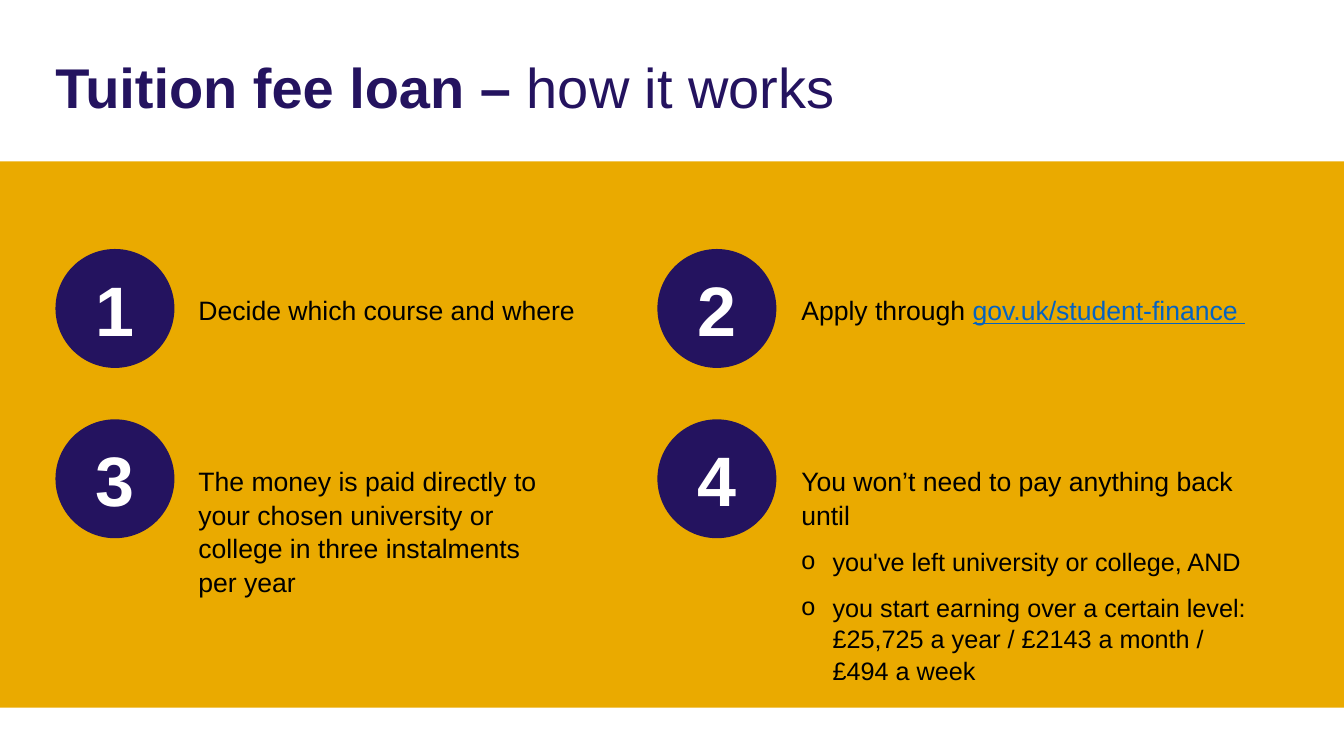
import pptx
import pptx.util
import pptx.dml.color
import pptx.enum.shapes
import pptx.enum.text
import lxml.etree

Inches = pptx.util.Inches
Pt = pptx.util.Pt
NAVY, GOLD, BLACK, WHITE, BLUE = "24135F", "EAAA00", "000000", "FFFFFF", "0563C1"


def color(text):
    return pptx.dml.color.RGBColor.from_string(text)


class Deck:
    face = "Arial"

    def __init__(self, slide):
        self.slide = slide

    def font(self, para, size, tint, bold=None):
        para.font.name = self.face
        para.font.size = Pt(size)
        para.font.color.rgb = color(tint)
        para.font.bold = bold

    def shape(self, kind, left, top, width, height, fill):
        shape = self.slide.shapes.add_shape(
            kind, Inches(left), Inches(top), Inches(width), Inches(height))
        shape.shadow.inherit = False
        shape.fill.solid()
        shape.fill.fore_color.rgb = color(fill)
        shape.line.fill.background()
        return shape

    def band(self, top, height):
        kind = pptx.enum.shapes.MSO_SHAPE.RECTANGLE
        self.shape(kind, 0, top, 13.33, height, GOLD)

    def badge(self, left, top, label):
        kind = pptx.enum.shapes.MSO_SHAPE.OVAL
        frame = self.shape(kind, left, top, 1.18, 1.18, NAVY).text_frame
        frame.vertical_anchor = pptx.enum.text.MSO_ANCHOR.MIDDLE
        para = frame.paragraphs[0]
        para.text = label
        para.alignment = pptx.enum.text.PP_ALIGN.CENTER
        self.font(para, 50, WHITE, True)

    def box(self, left, top, width, height):
        box = self.slide.shapes.add_textbox(
            Inches(left), Inches(top), Inches(width), Inches(height))
        box.text_frame.word_wrap = True
        return box.text_frame

    def title(self, strong, light):
        para = self.box(0.45, 0.47, 11.5, 0.63).paragraphs[0]
        self.font(para, 40, NAVY)
        for text, bold in ((strong, True), (light, False)):
            run = para.add_run()
            run.text = text
            run.font.bold = bold

    def body(self, left, top, width, height, text):
        frame = self.box(left, top, width, height)
        para = frame.paragraphs[0]
        para.text = text
        para.line_spacing = 1.05
        self.font(para, 19, BLACK)
        return frame

    def link(self, para, text):
        run = para.add_run()
        run.text = text
        run.font.underline = True
        run.font.color.rgb = color(BLUE)

    def bullet(self, frame, text):
        para = frame.add_paragraph()
        para.text = text
        para.level = 1
        para.space_before = Pt(10)
        para.line_spacing = 1.05
        self.font(para, 18, BLACK)
        props = para._p.get_or_add_pPr()
        props.set("marL", str(Inches(0.31)))
        props.set("indent", str(-Inches(0.31)))
        mark = lxml.etree.Element(pptx.oxml.ns.qn("a:buFont"), typeface=self.face)
        sign = lxml.etree.Element(pptx.oxml.ns.qn("a:buChar"), char="o")
        rest = props.find(pptx.oxml.ns.qn("a:defRPr"))
        rest.addprevious(mark)
        rest.addprevious(sign)


def main():
    show = pptx.Presentation()
    show.slide_width, show.slide_height = Inches(13.33), Inches(7.5)
    deck = Deck(show.slides.add_slide(show.slide_layouts[6]))

    deck.band(1.6, 5.42)
    deck.title("Tuition fee loan – ", "how it works")
    for index in range(4):
        row, col = divmod(index, 2)
        deck.badge(0.55 + 5.97 * col, 2.47 + 1.69 * row, str(index + 1))

    deck.body(1.87, 2.85, 4.12, 0.42, "Decide which course and where")
    apply = deck.body(7.85, 2.85, 4.88, 0.42, "Apply through ")
    deck.link(apply.paragraphs[0], "gov.uk/student-finance ")
    deck.body(1.87, 4.55, 3.69, 1.39,
              "The money is paid directly to your chosen university or "
              "college in three instalments per year")
    repay = deck.body(7.85, 4.55, 4.74, 1.73,
                      "You won’t need to pay anything back until")
    deck.bullet(repay, "you've left university or college, AND")
    deck.bullet(repay, "you start earning over a certain level: \v"
                       "£25,725 a year / £2143 a month / £494 a week")
    show.save("out.pptx")


if __name__ == "__main__":
    main()
